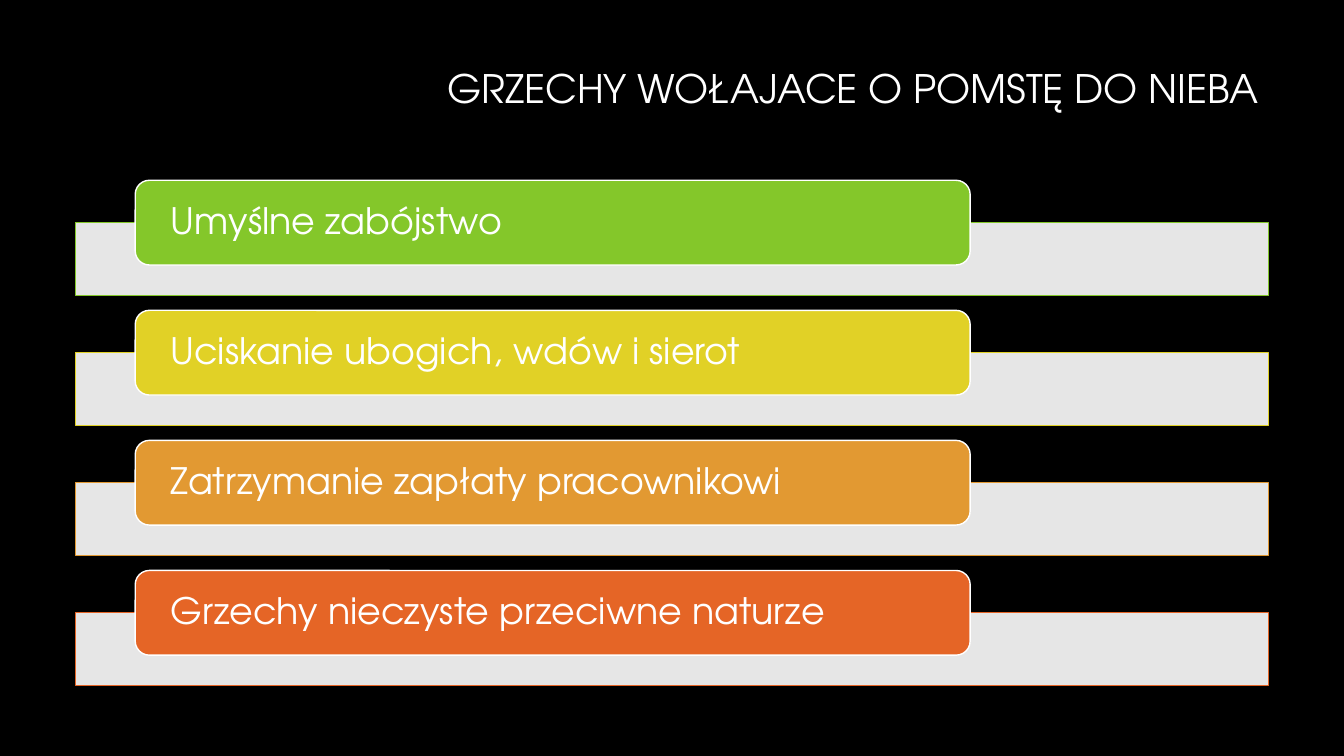
from lxml import etree
from pptx import Presentation
from pptx.dml.color import RGBColor
from pptx.enum.shapes import MSO_SHAPE
from pptx.enum.text import MSO_ANCHOR, PP_ALIGN
from pptx.oxml.ns import qn
from pptx.util import Pt

TITLE = "GRZECHY WOŁAJACE O POMSTĘ DO NIEBA"
SINS = [
    ("Umyślne zabójstwo", "green"),
    ("Uciskanie ubogich, wdów i sierot", "yellow"),
    ("Zatrzymanie zapłaty pracownikowi", "amber"),
    ("Grzechy nieczyste przeciwne naturze", "orange"),
]
COLORS = {
    "black": "000000",
    "white": "FFFFFF",
    "green": "84C72A",
    "yellow": "E1D126",
    "amber": "E29932",
    "orange": "E56526",
}
FONT = "TeX Gyre Adventor"
RECT, ROUND = MSO_SHAPE.RECTANGLE, MSO_SHAPE.ROUNDED_RECTANGLE
MIDDLE = MSO_ANCHOR.MIDDLE
LEFT, RIGHT = PP_ALIGN.LEFT, PP_ALIGN.RIGHT

BAR_LEFT, BAR_WIDTH, BAR_HEIGHT = 54, 852, 52
LABEL_LEFT, LABEL_WIDTH, LABEL_HEIGHT = 96.6, 596.4, 60.5
LABEL_TOP, BAR_DROP, PITCH = 128.8, 30.2, 92.9
LABEL_INSET = 22.3


def rgb(name):
    return RGBColor.from_string(COLORS[name])


def add_box(slide, kind, left, top, width, height, fill, line):
    sp = slide.shapes.add_shape(kind, Pt(left), Pt(top), Pt(width), Pt(height))
    sp.shadow.inherit = False
    sp.fill.solid()
    sp.fill.fore_color.rgb = rgb(fill)
    sp.line.color.rgb = rgb(line)
    sp.line.width = Pt(1)
    return sp


def set_opacity(sp, percent):
    color = sp._element.spPr.find(qn("a:solidFill")).find(qn("a:srgbClr"))
    etree.SubElement(color, qn("a:alpha")).set("val", str(percent * 1000))


def write(sp, text, size, align):
    tf = sp.text_frame
    tf.word_wrap = True
    tf.vertical_anchor = MIDDLE
    p = tf.paragraphs[0]
    p.text = text
    p.alignment = align
    p.line_spacing = 0.9
    r = p.runs[0]
    r.font.name = FONT
    r.font.size = Pt(size)
    r.font.color.rgb = rgb("white")
    return tf


def main():
    """Build the slide of four labelled bars and save it."""
    prs = Presentation()
    prs.slide_width, prs.slide_height = Pt(960), Pt(540)
    slide = prs.slides.add_slide(prs.slide_layouts[6])
    slide.background.fill.solid()
    slide.background.fill.fore_color.rgb = rgb("black")

    title = slide.shapes.add_textbox(Pt(228), Pt(36), Pt(678), Pt(57.6))
    write(title, TITLE, 28, RIGHT)

    for i, (sin, color) in enumerate(SINS):
        top = LABEL_TOP + i * PITCH
        bar = add_box(slide, RECT, BAR_LEFT, top + BAR_DROP,
                      BAR_WIDTH, BAR_HEIGHT, "white", color)
        set_opacity(bar, 90)
        label = add_box(slide, ROUND, LABEL_LEFT, top,
                        LABEL_WIDTH, LABEL_HEIGHT, color, "white")
        tf = write(label, sin, 26, LEFT)
        tf.margin_left = tf.margin_right = Pt(LABEL_INSET)
        tf.margin_top = tf.margin_bottom = 0

    prs.save("out.pptx")


if __name__ == "__main__":
    main()
